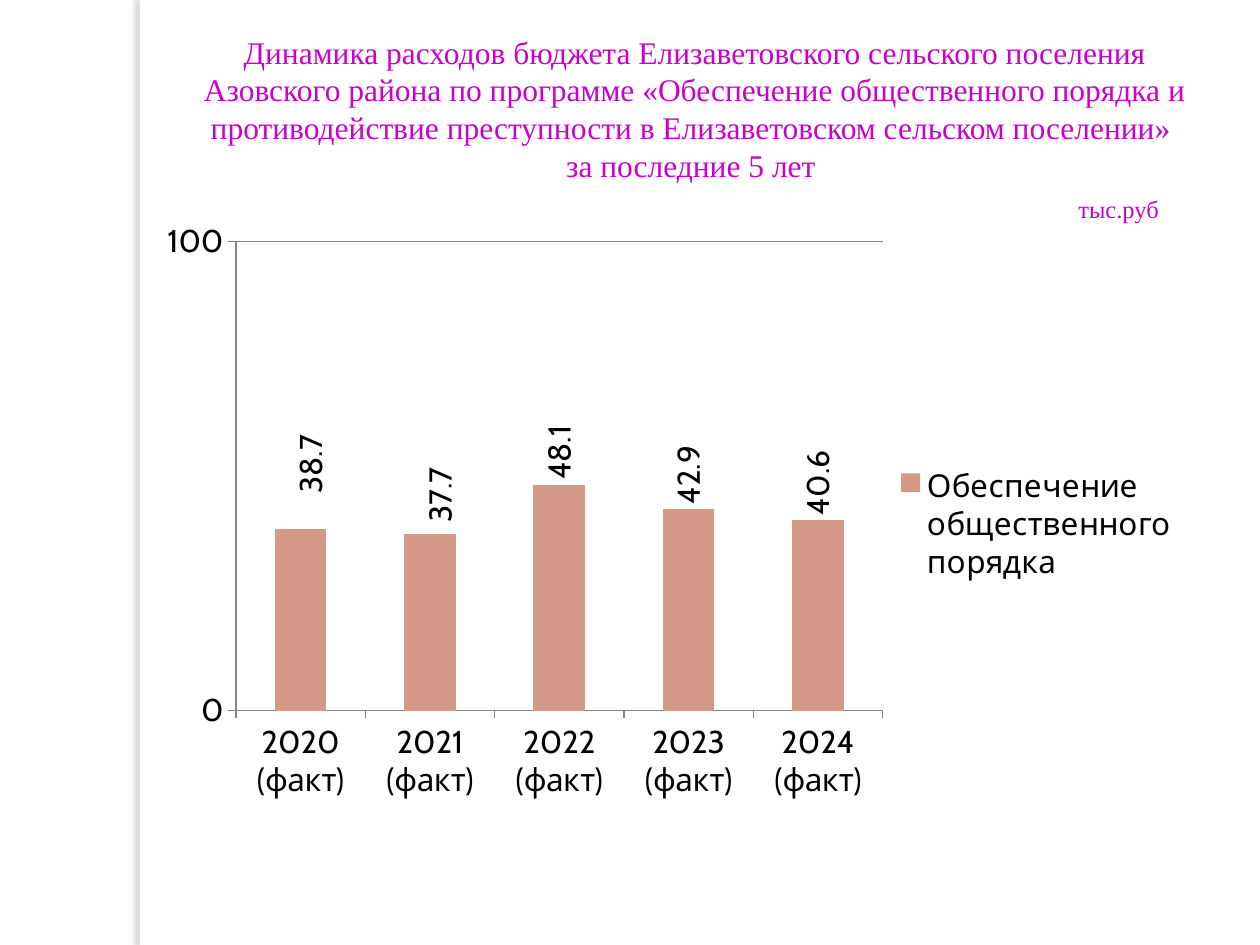
"""Build the slide on public order spending over the last five years."""
from lxml import etree
from pptx import Presentation
from pptx.chart import data
from pptx.dml.color import RGBColor
from pptx.enum import chart as charts, shapes, text
from pptx.oxml import parse_xml
from pptx.oxml.ns import nsdecls, qn
from pptx.util import Inches, Pt

WHITE = RGBColor(0xFF, 0xFF, 0xFF)
BLACK = RGBColor(0, 0, 0)
MAGENTA = RGBColor(0xCC, 0x00, 0xCC)
SALMON = RGBColor(0xD5, 0x99, 0x88)
GRAY = RGBColor(0x86, 0x86, 0x86)


def manual_layout(**settings):
    layout = parse_xml(f"<c:layout {nsdecls('c')}><c:manualLayout/></c:layout>")
    for name, value in settings.items():
        etree.SubElement(layout[0], qn(f"c:{name}")).set("val", str(value))
    return layout


presentation = Presentation()
presentation.slide_width = Inches(10)
presentation.slide_height = Inches(7.5)
slide = presentation.slides.add_slide(presentation.slide_layouts[6])

edge = slide.shapes.add_shape(
    shapes.MSO_SHAPE.RECTANGLE, Inches(1.11), 0, Inches(0.08), Inches(7.5)
)
edge.fill.solid()
edge.fill.fore_color.rgb = WHITE
edge.line.fill.background()
edge.shadow.inherit = False
edge_effects = edge._element.spPr.find(qn("a:effectLst"))
edge_effects.append(parse_xml(
    f'<a:outerShdw {nsdecls("a")} blurRad="{Pt(3)}" dist="{Pt(3)}" dir="10800000" '
    'algn="tl" rotWithShape="0"><a:srgbClr val="736F63"><a:alpha val="25000"/>'
    "</a:srgbClr></a:outerShdw>"
))

values = data.CategoryChartData(number_format="General")
values.categories = [f"{year} (факт)" for year in range(2020, 2025)]
values.add_series("Обеспечение общественного порядка", (38.7, 37.7, 48.1, 42.9, 40.6))
chart = slide.shapes.add_chart(
    charts.XL_CHART_TYPE.COLUMN_CLUSTERED,
    Inches(1.14), Inches(1.74), Inches(8.32), Inches(4.84), values,
).chart
chart.has_title = False
chart.font.name = "Cabin"
chart.font.size = Pt(18)
chart.font.color.rgb = BLACK
chart.has_legend = True
chart.legend.position = charts.XL_LEGEND_POSITION.RIGHT
chart.legend.include_in_layout = False

value_axis = chart.value_axis
value_axis.minimum_scale = 0
value_axis.maximum_scale = 100
value_axis.major_unit = 100
value_axis.has_major_gridlines = True
for line in (
    value_axis.format.line,
    value_axis.major_gridlines.format.line,
    chart.category_axis.format.line,
):
    line.color.rgb = GRAY
    line.width = Pt(0.75)
for axis in (value_axis, chart.category_axis):
    axis.major_tick_mark = charts.XL_TICK_MARK.OUTSIDE
chart.category_axis.tick_label_position = charts.XL_TICK_LABEL_POSITION.LOW

plot_area = chart._chartSpace.chart.plotArea
for layout in plot_area.findall(qn("c:layout")):
    plot_area.remove(layout)
plot_area.insert(0, manual_layout(
    layoutTarget="inner", xMode="edge", yMode="edge", x=0.088, y=0.036, w=0.617, h=0.77
))

plot = chart.plots[0]
plot.gap_width = 150
plot.vary_by_categories = False
series = plot.series[0]
series.format.fill.solid()
series.format.fill.fore_color.rgb = SALMON
labels = series.data_labels
labels.show_value = True
labels.position = charts.XL_LABEL_POSITION.OUTSIDE_END
labels.font.size = Pt(18)

for index, (shift_x, shift_y) in enumerate([(0.01, -0.05), (0.01, -0.01)]):
    label = series.points[index].data_label
    label.font.size = Pt(18)
    label.position = charts.XL_LABEL_POSITION.OUTSIDE_END
    label_element = labels._element.findall(qn("c:dLbl"))[index]
    label_element.insert(1, manual_layout(x=shift_x, y=shift_y))
for body in labels._element.iter(qn("a:bodyPr")):
    body.set("rot", "-5400000")
    body.set("vert", "horz")

title = slide.shapes.add_textbox(Inches(1.3), Inches(0.21), Inches(8.43), Inches(1.65))
frame = title.text_frame
frame.word_wrap = True
frame.text = (
    "Динамика расходов бюджета Елизаветовского сельского поселения Азовского района "
    "по программе «Обеспечение общественного порядка и противодействие преступности "
    "в Елизаветовском сельском поселении» \nза последние 5 лет \nтыс.руб"
)
for paragraph in frame.paragraphs:
    paragraph.alignment = text.PP_ALIGN.CENTER
    paragraph.font.name = "Times New Roman"
    paragraph.font.size = Pt(18)
    paragraph.font.color.rgb = MAGENTA
unit = frame.paragraphs[-1]
unit.alignment = text.PP_ALIGN.LEFT
unit.font.size = Pt(14)
unit.space_before = Pt(6)
unit._p.get_or_add_pPr().set("marL", str(Inches(7.16)))

presentation.save("out.pptx")
